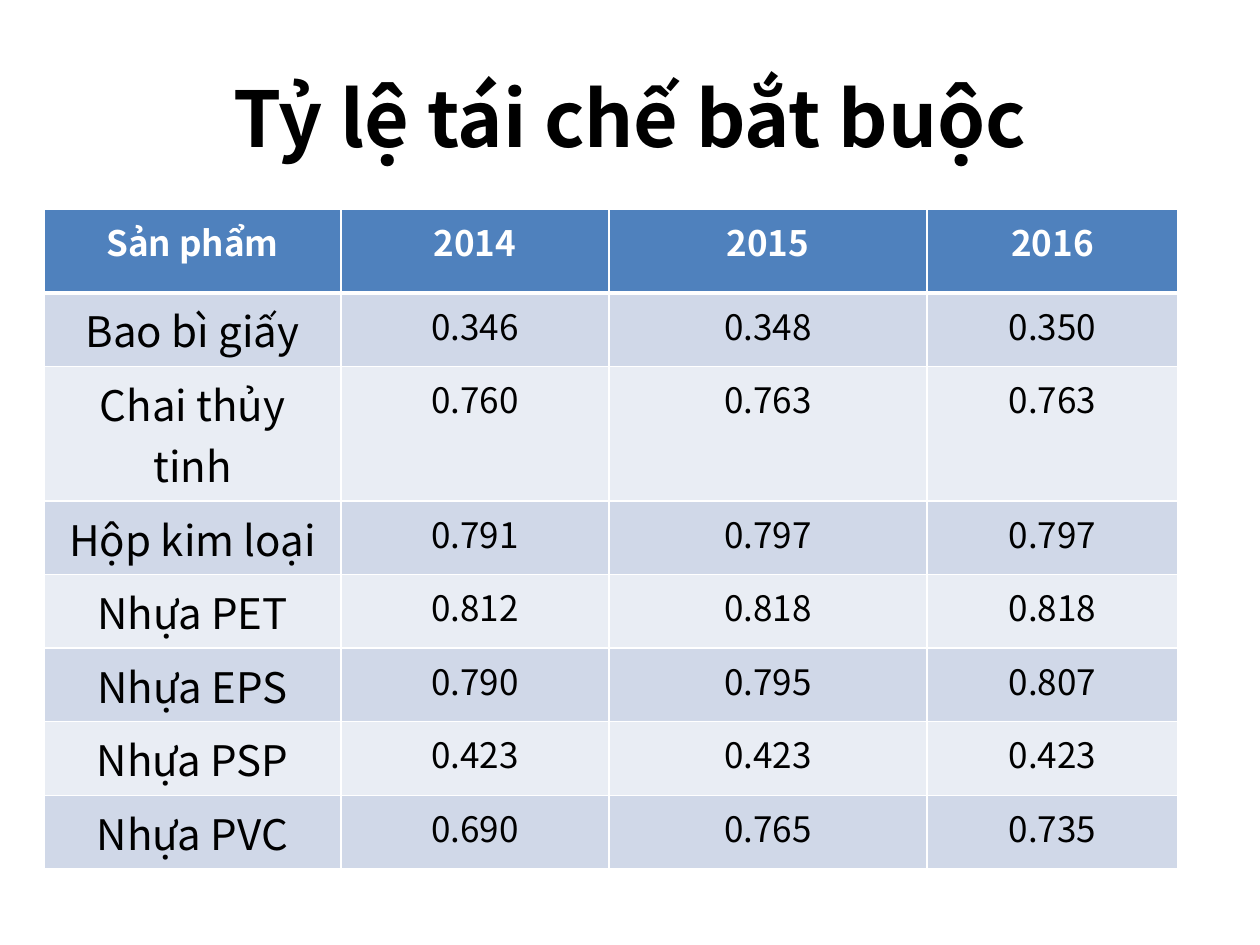
from lxml.etree import SubElement
from pptx import Presentation
from pptx.dml.color import RGBColor as RGB
from pptx.enum.text import MSO_ANCHOR as Anchor, PP_ALIGN as Align
from pptx.oxml.ns import qn
from pptx.util import Emu, Pt

FONT = "Noto Sans CJK KR"
WHITE = RGB(0xFF, 0xFF, 0xFF)
BLACK = RGB(0x00, 0x00, 0x00)
HEADER = RGB(0x4F, 0x81, 0xBD)
BANDS = (RGB(0xE9, 0xED, 0xF4), RGB(0xD0, 0xD8, 0xE8))

TITLE_ONLY = 5


def px(n):
    """Turn pixels (126 to the inch) into EMU."""
    return Emu(round(n * 914400 / 126))


class Deck:
    def __init__(self, width, height):
        self.prs = Presentation()
        self.prs.slide_width, self.prs.slide_height = px(width), px(height)
        self.s = self.prs.slides.add_slide(self.prs.slide_layouts[TITLE_ONLY])

    def add_text(self, tf, text, size, color, bold=False):
        p = tf.paragraphs[0]
        p.alignment = Align.CENTER
        r = p.add_run()
        r.text = text
        r.font.name, r.font.size, r.font.bold = FONT, Pt(size), bold
        r.font.color.rgb = color

    def title(self, text, x, y, w, h):
        sp = self.s.shapes.title
        sp.left, sp.top, sp.width, sp.height = map(px, (x, y, w, h))
        sp.text_frame.vertical_anchor = Anchor.MIDDLE
        self.add_text(sp.text_frame, text, 44, BLACK, bold=True)

    def border(self, cell, side, points):
        ln = SubElement(cell._tc.get_or_add_tcPr(), qn(f"a:ln{side}"), w=str(Pt(points)))
        fill = SubElement(ln, qn("a:solidFill"))
        SubElement(fill, qn("a:srgbClr"), val=str(WHITE))

    def table(self, rows, x, y, widths, heights):
        frame = self.s.shapes.add_table(len(rows), len(widths), px(x), px(y),
                                        px(sum(widths)), px(sum(heights)))
        table = frame.table
        for column, w in zip(table.columns, widths):
            column.width = px(w)
        for row, h in zip(table.rows, heights):
            row.height = px(h)
        for i, values in enumerate(rows):
            for j, text in enumerate(values):
                self.cell(table.cell(i, j), text, i, j)

    def cell(self, cell, text, i, j):
        header = i == 0
        # Borders come before the fill; a thick line closes the header
        for side in "LRTB":
            under_header = (i, side) in ((0, "B"), (1, "T"))
            self.border(cell, side, 3 if under_header else 1)
        cell.fill.solid()
        cell.fill.fore_color.rgb = HEADER if header else BANDS[i % 2]
        size = 24 if j == 0 and not header else 20
        self.add_text(cell.text_frame, text, size, WHITE if header else BLACK, header)


ROWS = [
    ("Sản phẩm", "2014", "2015", "2016"),
    ("Bao bì giấy", "0.346", "0.348", "0.350"),
    ("Chai thủy tinh", "0.760", "0.763", "0.763"),
    ("Hộp kim loại", "0.791", "0.797", "0.797"),
    ("Nhựa PET", "0.812", "0.818", "0.818"),
    ("Nhựa EPS", "0.790", "0.795", "0.807"),
    ("Nhựa PSP", "0.423", "0.423", "0.423"),
    ("Nhựa PVC", "0.690", "0.765", "0.735"),
]


def main():
    deck = Deck(1260, 945)
    # Heading
    deck.title("Tỷ lệ tái chế bắt buộc", 63, 38, 1134, 158)
    # Recycling rates by product and year
    deck.table(ROWS, 44, 209, widths=(297, 268, 318, 251),
               heights=(84, 60, 67, 69, 69, 69, 67, 67))
    deck.prs.save("out.pptx")


if __name__ == "__main__":
    main()
